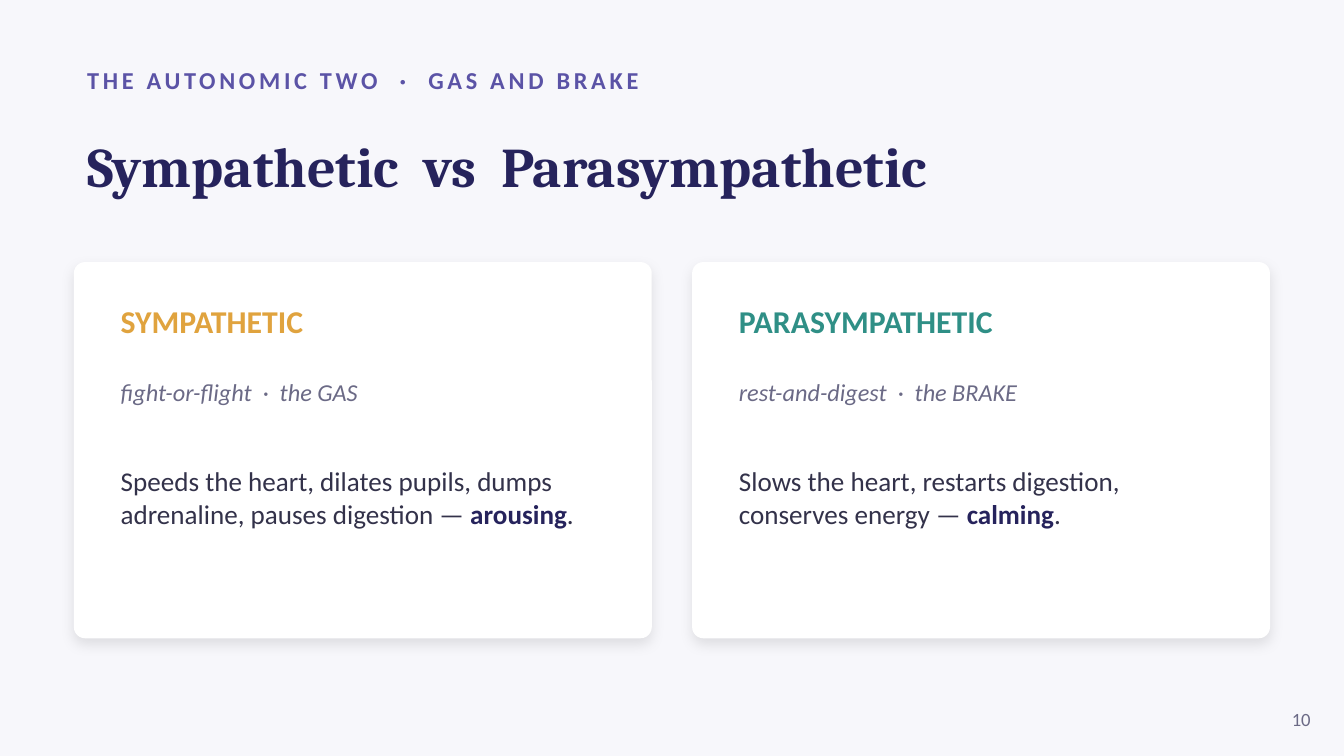
"""Build the slide comparing the sympathetic and parasympathetic systems."""
from dataclasses import dataclass

from lxml import etree
from pptx import Presentation
from pptx import util as u
from pptx.dml.color import RGBColor
from pptx.enum import shapes, text
from pptx.oxml import ns

PX = u.Inches(1) // 200
COLORS = {
    "page": "F7F7FB", "card": "FFFFFF", "navy": "26235C", "violet": "5B53A6",
    "amber": "E0A33E", "teal": "2F8F86", "muted": "6B6A86", "ink": "33324A",
    "shadow": "000000",
}
CARD_LEFT, CARD_TOP, CARD_WIDTH, CARD_HEIGHT, CARD_GAP = 110, 390, 860, 560, 60
TEXT_INSET = 50


@dataclass(frozen=True)
class System:
    name: str
    color: str
    role: str
    effects: str
    outcome: str


SYSTEMS = (
    System("SYMPATHETIC", "amber", "fight-or-flight  ·  the GAS",
           "Speeds the heart, dilates pupils, dumps adrenaline, pauses digestion — ",
           "arousing"),
    System("PARASYMPATHETIC", "teal", "rest-and-digest  ·  the BRAKE",
           "Slows the heart, restarts digestion, conserves energy — ", "calming"),
)


def rgb(color: str) -> RGBColor:
    return RGBColor.from_string(COLORS[color])


def place(*lengths: int) -> list[int]:
    return [length * PX for length in lengths]


def write(paragraph, wording: str, *, size: float, color: str, font: str = "Calibri",
          bold: bool = False, italic: bool = False, spacing: float = 0) -> None:
    run = paragraph.add_run()
    run.text = wording
    run.font.name, run.font.size = font, u.Pt(size)
    run.font.bold, run.font.italic = bold, italic
    run.font.color.rgb = rgb(color)
    if spacing:
        run.font._element.set("spc", str(round(spacing * 100)))


def add_frame(slide, *box: int, anchor=text.MSO_ANCHOR.MIDDLE):
    frame = slide.shapes.add_textbox(*place(*box)).text_frame
    frame.word_wrap = True
    frame.vertical_anchor = anchor
    return frame


def add_shadow(shape) -> None:
    effects = etree.SubElement(shape._element.spPr, ns.qn("a:effectLst"))
    shadow = etree.SubElement(
        effects, ns.qn("a:outerShdw"), blurRad=str(u.Pt(7)), dist=str(u.Pt(3)),
        dir="5400000", algn="ctr", rotWithShape="0")
    tint = etree.SubElement(shadow, ns.qn("a:srgbClr"), val=COLORS["shadow"])
    etree.SubElement(tint, ns.qn("a:alpha"), val="10000")


def add_card(slide, system: System, left: int) -> None:
    card = slide.shapes.add_shape(
        shapes.MSO_SHAPE.ROUNDED_RECTANGLE,
        *place(left, CARD_TOP, CARD_WIDTH, CARD_HEIGHT))
    card.adjustments[0] = 0.03
    card.fill.solid()
    card.fill.fore_color.rgb = rgb("card")
    card.line.fill.background()
    add_shadow(card)

    frame = add_frame(slide, left + TEXT_INSET, CARD_TOP + TEXT_INSET,
                      CARD_WIDTH - 2 * TEXT_INSET, 480, anchor=text.MSO_ANCHOR.TOP)
    heading, role, effects = (
        frame.paragraphs[0], frame.add_paragraph(), frame.add_paragraph())
    write(heading, system.name, size=17, color=system.color, bold=True)
    role.space_before = u.Pt(20)
    write(role, system.role, size=13, color="muted", italic=True)
    effects.space_before = u.Pt(31)
    write(effects, system.effects, size=14.5, color="ink")
    write(effects, system.outcome, size=14.5, color="navy", bold=True)
    write(effects, ".", size=14.5, color="ink")


def add_title(slide, wording: str) -> None:
    title = slide.shapes.title
    title.left, title.top, title.width, title.height = place(110, 156, 1780, 180)
    frame = title.text_frame
    frame.auto_size = text.MSO_AUTO_SIZE.NONE
    frame.vertical_anchor = text.MSO_ANCHOR.MIDDLE
    frame.paragraphs[0].alignment = text.PP_ALIGN.LEFT
    write(frame.paragraphs[0], wording, size=30, color="navy", font="Cambria", bold=True)


def main() -> None:
    deck = Presentation()
    deck.slide_width, deck.slide_height = place(2000, 1125)
    slide = deck.slides.add_slide(deck.slide_layouts.get_by_name("Title Only"))
    slide.background.fill.solid()
    slide.background.fill.fore_color.rgb = rgb("page")

    eyebrow = add_frame(slide, 110, 84, 1800, 70).paragraphs[0]
    write(eyebrow, "THE AUTONOMIC TWO  ·  GAS AND BRAKE", size=13, color="violet",
          bold=True, spacing=2)
    add_title(slide, "Sympathetic  vs  Parasympathetic")
    for column, system in enumerate(SYSTEMS):
        add_card(slide, system, CARD_LEFT + column * (CARD_WIDTH + CARD_GAP))

    page_number = add_frame(slide, 1870, 1040, 100, 60).paragraphs[0]
    page_number.alignment = text.PP_ALIGN.RIGHT
    write(page_number, "10", size=10, color="muted")
    deck.save("out.pptx")


if __name__ == "__main__":
    main()
